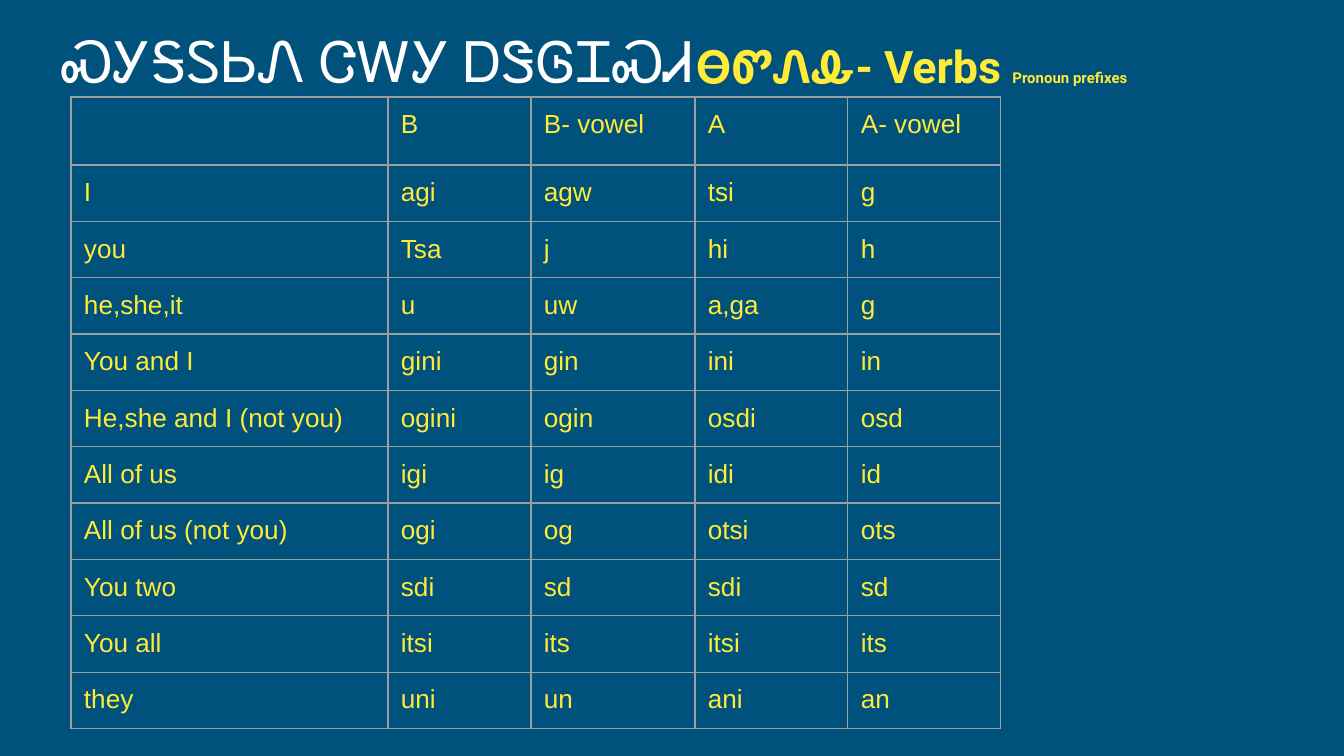
from lxml import etree
from pptx import Presentation
from pptx.dml.color import RGBColor
from pptx.enum.text import MSO_ANCHOR, MSO_AUTO_SIZE, PP_ALIGN
from pptx.oxml.ns import qn
from pptx.util import Emu, Pt

LEFT = PP_ALIGN.LEFT
TOP, BOTTOM = MSO_ANCHOR.TOP, MSO_ANCHOR.BOTTOM
NO_FIT = MSO_AUTO_SIZE.NONE

SCALE = 914400 / 134.4
INSETS = {"margin_left": 13, "margin_right": 13, "margin_top": 13, "margin_bottom": 14}
COLORS = {"bg": "00517C", "title": "FFFFFF", "accent": "FFEB38", "grid": "9E9E9E"}

# Text formats
TITLE = {"name": "Roboto Slab", "size": Pt(30), "bold": False, "color": "title"}
HEADING = {"name": "Roboto", "size": Pt(24), "bold": True, "color": "accent"}
NOTE = {**HEADING, "size": Pt(8)}
CELL = {"name": "Arial", "size": Pt(14), "bold": False, "color": "accent"}

# Pronoun prefixes by person and verb set
COL_WIDTHS = [317, 143, 164, 153, 153]
ROW_HEIGHT = 56
ROWS = [
    ["", "B", "B- vowel", "A", "A- vowel"],
    ["I", "agi", "agw", "tsi", "g"],
    ["you", "Tsa", "j", "hi", "h"],
    ["he,she,it", "u", "uw", "a,ga", "g"],
    ["You and I", "gini", "gin", "ini", "in"],
    ["He,she and I (not you)", "ogini", "ogin", "osdi", "osd"],
    ["All of us", "igi", "ig", "idi", "id"],
    ["All of us (not you)", "ogi", "og", "otsi", "ots"],
    ["You two", "sdi", "sd", "sdi", "sd"],
    ["You all", "itsi", "its", "itsi", "its"],
    ["they", "uni", "un", "ani", "an"],
]


def px(n):
    return Emu(round(n * SCALE))


def rgb(key):
    return RGBColor.from_string(COLORS[key])


def set_insets(target):
    for name, value in INSETS.items():
        setattr(target, name, px(value))


def add_run(p, text, fmt):
    r = p.add_run()
    r.text = text
    for name, value in fmt.items():
        if name == "color":
            r.font.color.rgb = rgb(value)
        else:
            setattr(r.font, name, value)


def fill_text(sp, runs, anchor):
    tf = sp.text_frame
    tf.word_wrap = True
    tf.auto_size = NO_FIT
    tf.vertical_anchor = anchor
    set_insets(tf)
    p = tf.paragraphs[0]
    p.alignment = LEFT
    for text, fmt in runs:
        add_run(p, text, fmt)


def add_title(s, box, runs):
    sp = s.shapes.title
    sp.left, sp.top, sp.width, sp.height = map(px, box)
    fill_text(sp, runs, BOTTOM)


def add_text(s, box, runs):
    fill_text(s.shapes.add_textbox(*map(px, box)), runs, TOP)


def set_borders(cell):
    tc_pr = cell._tc.get_or_add_tcPr()
    for side in ("lnL", "lnR", "lnT", "lnB"):
        ln = etree.SubElement(tc_pr, qn(f"a:{side}"), w=str(Pt(0.75)))
        fill = etree.SubElement(ln, qn("a:solidFill"))
        etree.SubElement(fill, qn("a:srgbClr"), val=COLORS["grid"])


def add_table(s, left, top, rows):
    box = left, top, sum(COL_WIDTHS), ROW_HEIGHT * len(rows)
    table = s.shapes.add_table(len(rows), len(COL_WIDTHS), *map(px, box)).table
    table.first_row = table.horz_banding = False
    for col, width in zip(table.columns, COL_WIDTHS):
        col.width = px(width)
    for row, texts in zip(table.rows, rows):
        row.height = px(ROW_HEIGHT)
        for cell, text in zip(row.cells, texts):
            set_insets(cell)
            set_borders(cell)
            cell.fill.background()
            if text:
                add_run(cell.text_frame.paragraphs[0], text, CELL)


def main():
    prs = Presentation()
    prs.slide_width, prs.slide_height = px(1344), px(756)
    s = prs.slides.add_slide(prs.slide_layouts[5])
    s.background.fill.solid()
    s.background.fill.fore_color.rgb = rgb("bg")

    # Title line
    add_title(s, (48, 7, 1230, 101), [("ᏍᎩᎦᏚᏏᏁ ᏣᎳᎩ ᎠᏕᎶᏆᏍᏗ", TITLE)])
    add_text(s, (683, 26, 577, 82),
             [("ᎾᏛᏁᎲ- Verbs ", HEADING), ("Pronoun prefixes", NOTE)])

    # Prefix table
    add_table(s, 71, 97, ROWS)
    prs.save("out.pptx")


if __name__ == "__main__":
    main()
